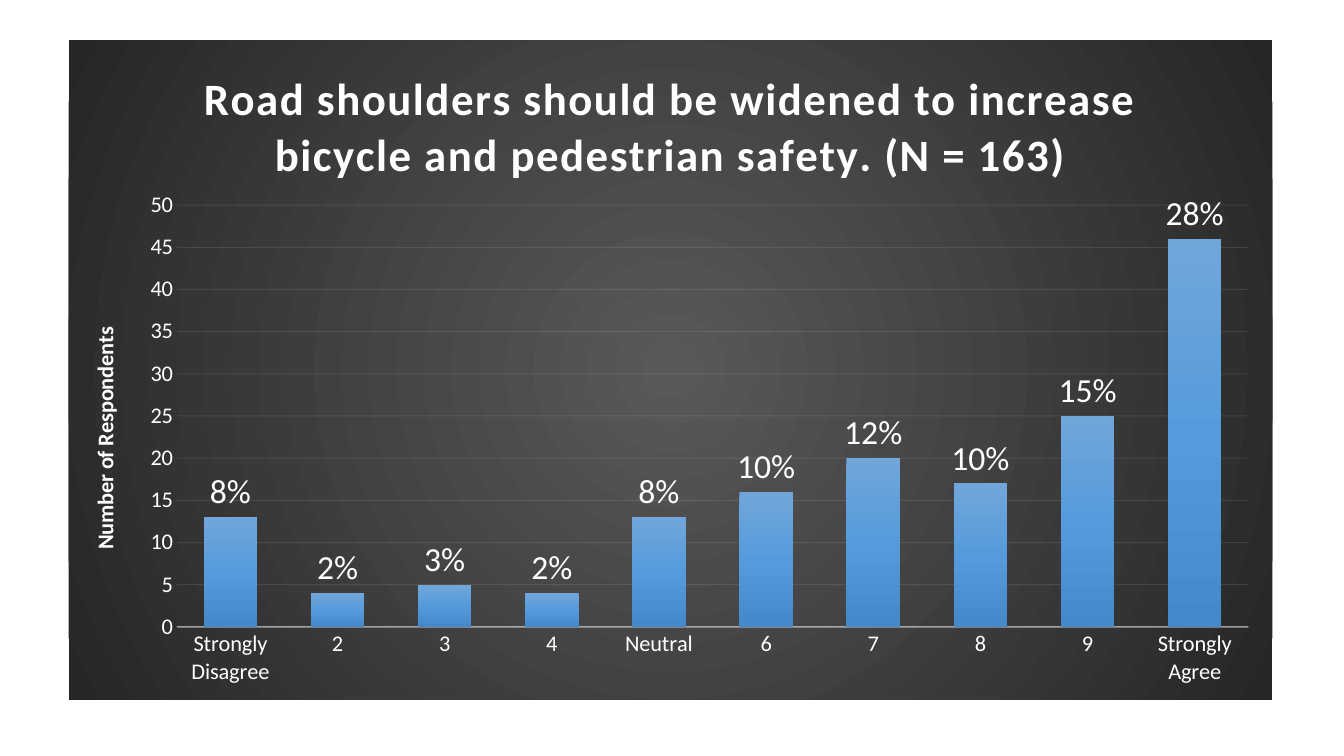
import pptx
import pptx.chart.data
import pptx.dml.color
import pptx.enum.chart
import pptx.oxml
import pptx.oxml.ns
import pptx.util
from lxml import etree
from pptx.util import Inches

WHITE = pptx.dml.color.RGBColor(0xFF, 0xFF, 0xFF)
PALE = pptx.dml.color.RGBColor(0xF2, 0xF2, 0xF2)
BACKGROUND_STOPS = [(0, "595959"), (100, "262626")]
COLUMN_STOPS = [(0, "71A6DB"), (50, "559BDB"), (100, "448ACA")]
RESPONDENTS = 163
CATEGORIES = ["Strongly Disagree", "2", "3", "4", "Neutral",
              "6", "7", "8", "9", "Strongly Agree"]
COUNTS = [13, 4, 5, 4, 13, 16, 20, 17, 25, 46]
QN = pptx.oxml.ns.qn


def gradient(stops, direction):
    """Return shape properties with a gradient fill and no outline."""
    stop_list = "".join(
        f'<a:gs pos="{position * 1000}"><a:srgbClr val="{color}"/></a:gs>'
        for position, color in stops)
    return pptx.oxml.parse_xml(
        f'<c:spPr {pptx.oxml.ns.nsdecls("c", "a")}><a:gradFill rotWithShape="1">'
        f'<a:gsLst>{stop_list}</a:gsLst>{direction}</a:gradFill>'
        '<a:ln><a:noFill/></a:ln></c:spPr>')


def style_font(font, size, bold=False):
    font.name = "Calibri"
    font.size = pptx.util.Pt(size)
    font.bold = bold
    font.color.rgb = WHITE


presentation = pptx.Presentation()
presentation.slide_width = Inches(13.33)
presentation.slide_height = Inches(7.5)
slide = presentation.slides.add_slide(presentation.slide_layouts[6])

# Chart
chart_data = pptx.chart.data.CategoryChartData()
chart_data.categories = CATEGORIES
chart_data.add_series("Series 1", COUNTS)
chart = slide.shapes.add_chart(
    pptx.enum.chart.XL_CHART_TYPE.COLUMN_CLUSTERED,
    Inches(0.68), Inches(0.4), Inches(11.94), Inches(6.54), chart_data).chart
chart.has_legend = False
style_font(chart.font, 10)

# Titles
category_axis, value_axis = chart.category_axis, chart.value_axis
for owner, text, size in [
        (chart, f"Road shoulders should be widened to increase bicycle and "
                f"pedestrian safety. (N = {RESPONDENTS})", 32),
        (value_axis, "Number of Respondents", 16)]:
    owner.has_title = True
    text_frame = (chart.chart_title if owner is chart else value_axis.axis_title).text_frame
    text_frame.text = text
    run = text_frame.paragraphs[0].runs[0]
    style_font(run.font, size, bold=True)
    if owner is chart:
        run.font._element.set("spc", "100")
        chart.chart_title.include_in_layout = False

# Axes and gridlines
for axis in (category_axis, value_axis):
    axis.major_tick_mark = pptx.enum.chart.XL_TICK_MARK.NONE
    axis.minor_tick_mark = pptx.enum.chart.XL_TICK_MARK.NONE
    style_font(axis.tick_labels.font, 16)
value_axis.minimum_scale = 0
value_axis.maximum_scale = 50
value_axis.major_unit = 5
value_axis.format.line.fill.background()
for line, width, opacity in [(category_axis.format.line, 1, 54),
                             (value_axis.major_gridlines.format.line, 0.75, 10)]:
    line.width = pptx.util.Pt(width)
    line.color.rgb = PALE
    color = line._ln.find(".//" + QN("a:srgbClr"))
    etree.SubElement(color, QN("a:alpha"), val=str(opacity * 1000))

# Columns
plot = chart.plots[0]
plot.gap_width = 100
plot.overlap = -24
plot.vary_by_categories = False
series = plot.series[0]
series.invert_if_negative = False
series._element.find(QN("c:tx")).addnext(
    gradient(COLUMN_STOPS, '<a:lin ang="5400000" scaled="0"/>'))

# Percentage labels
labels = series.data_labels
labels.show_value = True
labels.position = pptx.enum.chart.XL_LABEL_POSITION.OUTSIDE_END
style_font(labels.font, 24)
for index, count in enumerate(COUNTS):
    label = series.points[index].data_label
    label.text_frame.text = f"{count / RESPONDENTS:.0%}"
    style_font(label.text_frame.paragraphs[0].runs[0].font, 24)
    label.position = pptx.enum.chart.XL_LABEL_POSITION.OUTSIDE_END

# Chart background
chart_element = chart._chartSpace.find(QN("c:chart"))
chart_element.addnext(gradient(
    BACKGROUND_STOPS,
    '<a:path path="circle"><a:fillToRect l="50000" t="50000" r="50000" b="50000"/></a:path>'))

# Plot position, as fractions of the chart
plot_area = chart_element.find(QN("c:plotArea"))
old_layout = plot_area.find(QN("c:layout"))
if old_layout is not None:
    plot_area.remove(old_layout)
layout = etree.Element(QN("c:layout"))
manual = etree.SubElement(layout, QN("c:manualLayout"))
for tag, value in [("layoutTarget", "inner"), ("xMode", "edge"), ("yMode", "edge"),
                   ("x", "0.09"), ("y", "0.25"), ("w", "0.89"), ("h", "0.64")]:
    etree.SubElement(manual, QN("c:" + tag), val=value)
plot_area.insert(0, layout)

presentation.save("out.pptx")
